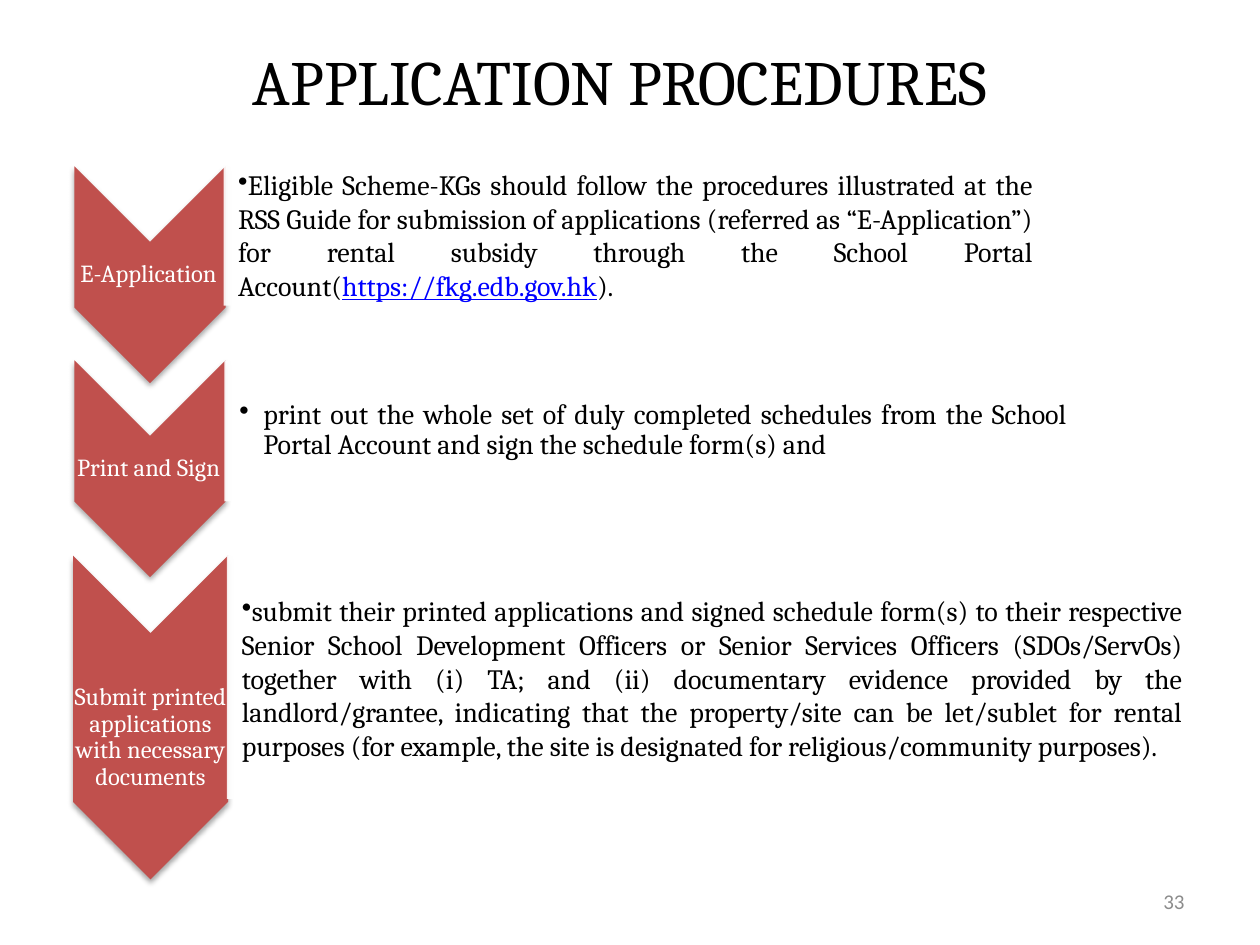
import pptx
import pptx.dml.color
import pptx.enum.shapes
import pptx.enum.text
import pptx.oxml
import pptx.oxml.ns
import pptx.util

PX = 9144  # EMU per px, 100 px to the inch
COLORS = {"chevron": "C0504D", "white": "FFFFFF", "black": "000000",
          "link": "0000FF", "number": "8C8C8C"}
ALIGN = pptx.enum.text.PP_ALIGN
MIDDLE = pptx.enum.text.MSO_ANCHOR.MIDDLE
SHAPES = pptx.enum.shapes.MSO_SHAPE
NS = pptx.oxml.ns.nsdecls("a")

deck = pptx.Presentation()
deck.slide_width, deck.slide_height = 1000 * PX, 750 * PX
slide = deck.slides.add_slide(deck.slide_layouts[6])


def add_text(box, runs, size, font, frame_format, paragraph_format):
    """Add a one-paragraph text box; runs are (text, colour name) pairs."""
    frame = slide.shapes.add_textbox(*(v * PX for v in box)).text_frame
    for name, value in {"word_wrap": True, **frame_format}.items():
        setattr(frame, name, value)
    paragraph = frame.paragraphs[0]
    for name, value in paragraph_format.items():
        setattr(paragraph, name, value)
    for text, color in runs:
        run = paragraph.add_run()
        run.text = text
        run.font.name, run.font.size = font, pptx.util.Pt(size)
        run.font.color.rgb = pptx.dml.color.RGBColor.from_string(COLORS[color])
        run.font.underline = color == "link"
    return paragraph


def add_turned(kind, box, color):
    """Add a borderless shape turned a quarter clockwise."""
    shape = slide.shapes.add_shape(kind, *(v * PX for v in box))
    shape.rotation = 90
    shape.shadow.inherit = False
    shape.fill.solid()
    shape.fill.fore_color.rgb = pptx.dml.color.RGBColor.from_string(COLORS[color])
    shape.line.fill.background()
    return shape


TIGHT = {"vertical_anchor": MIDDLE, "margin_left": PX, "margin_top": PX,
         "margin_right": PX, "margin_bottom": PX}
LABEL = {"alignment": ALIGN.CENTER, "line_spacing": 0.9,
         "space_after": pptx.util.Pt(5)}
DETAIL = {"alignment": ALIGN.JUSTIFY, "level": 1}
HANGING = {**DETAIL, "line_spacing": 0.9, "space_after": pptx.util.Pt(2.4)}

steps = [
    {"chevron": (33, 158, 172, 120), "label_box": (58, 192, 120, 52),
     "label": "E-Application", "label_top": 1,
     "panel": (446, -138, 112, 649), "detail_box": (177, 136, 644, 101),
     "format": DETAIL, "indent": 0,
     "detail": [("Eligible Scheme-KGs should follow the procedures illustrated at "
                 "the RSS Guide for submission of applications (referred as "
                 "“E-Application”) for rental subsidy through the School Portal "
                 "Account(", "black"),
                ("https://fkg.edb.gov.hk", "link"), (").", "black")]},
    {"chevron": (33, 312, 172, 120), "label_box": (58, 346, 120, 52),
     "label": "Print and Sign", "label_top": 1,
     "panel": (460, 4, 112, 676), "detail_box": (178, 291, 670, 101),
     "format": HANGING, "indent": 19,
     "detail": [("print out the whole set of duly completed schedules from the "
                 "School Portal Account and sign the schedule form(s) and",
                 "black")]},
    {"chevron": (-9, 508, 257, 123), "label_box": (58, 503, 123, 134),
     "label": "Submit printed applications with necessary documents",
     "label_top": 32,
     "panel": (468, 153, 193, 769), "detail_box": (180, 451, 760, 174),
     "format": DETAIL, "indent": 0,
     "detail": [("submit their printed applications and signed schedule form(s) "
                 "to their respective Senior School Development Officers or "
                 "Senior Services Officers (SDOs/ServOs) together with (i) TA; "
                 "and (ii) documentary evidence provided by the "
                 "landlord/grantee, indicating that the property/site can be "
                 "let/sublet for rental purposes (for example, the site is "
                 "designated for religious/community purposes).", "black")]},
]

for step in steps:
    # Chevron with a soft shadow below
    chevron = add_turned(SHAPES.CHEVRON, step["chevron"], "chevron")
    effects = chevron._element.spPr.find(pptx.oxml.ns.qn("a:effectLst"))
    effects.append(pptx.oxml.parse_xml(
        f'<a:outerShdw {NS} blurRad="40000" dist="23000" dir="5400000" '
        'rotWithShape="0"><a:srgbClr val="000000"><a:alpha val="35000"/>'
        '</a:srgbClr></a:outerShdw>'))
    add_text(step["label_box"], [(step["label"], "white")], 14, "Cambria",
             {**TIGHT, "margin_top": step["label_top"] * PX}, LABEL)

    # Translucent panel behind the details
    panel = add_turned(SHAPES.ROUND_2_SAME_RECTANGLE, step["panel"], "white")
    panel_color = panel._element.spPr.find(".//" + pptx.oxml.ns.qn("a:srgbClr"))
    panel_color.append(pptx.oxml.parse_xml(f'<a:alpha {NS} val="90000"/>'))

    # Bulleted details
    detail = add_text(step["detail_box"], step["detail"], 16, "Cambria",
                      {**TIGHT, "margin_left": 12 * PX}, step["format"])
    bullet = detail._p.get_or_add_pPr()
    bullet.set("marL", str(step["indent"] * PX))
    bullet.set("indent", str(-step["indent"] * PX))
    bullet.append(pptx.oxml.parse_xml(f'<a:buChar {NS} char="•"/>'))

# Slide number and title
add_text((717, 695, 233, 40), [("33", "number")], 12, "Calibri",
         {"vertical_anchor": MIDDLE}, {"alignment": ALIGN.RIGHT})
add_text((67, 29, 850, 71), [("APPLICATION PROCEDURES", "black")], 36, "Cambria",
         {"auto_size": pptx.enum.text.MSO_AUTO_SIZE.SHAPE_TO_FIT_TEXT},
         {"alignment": ALIGN.CENTER})

deck.save("out.pptx")
